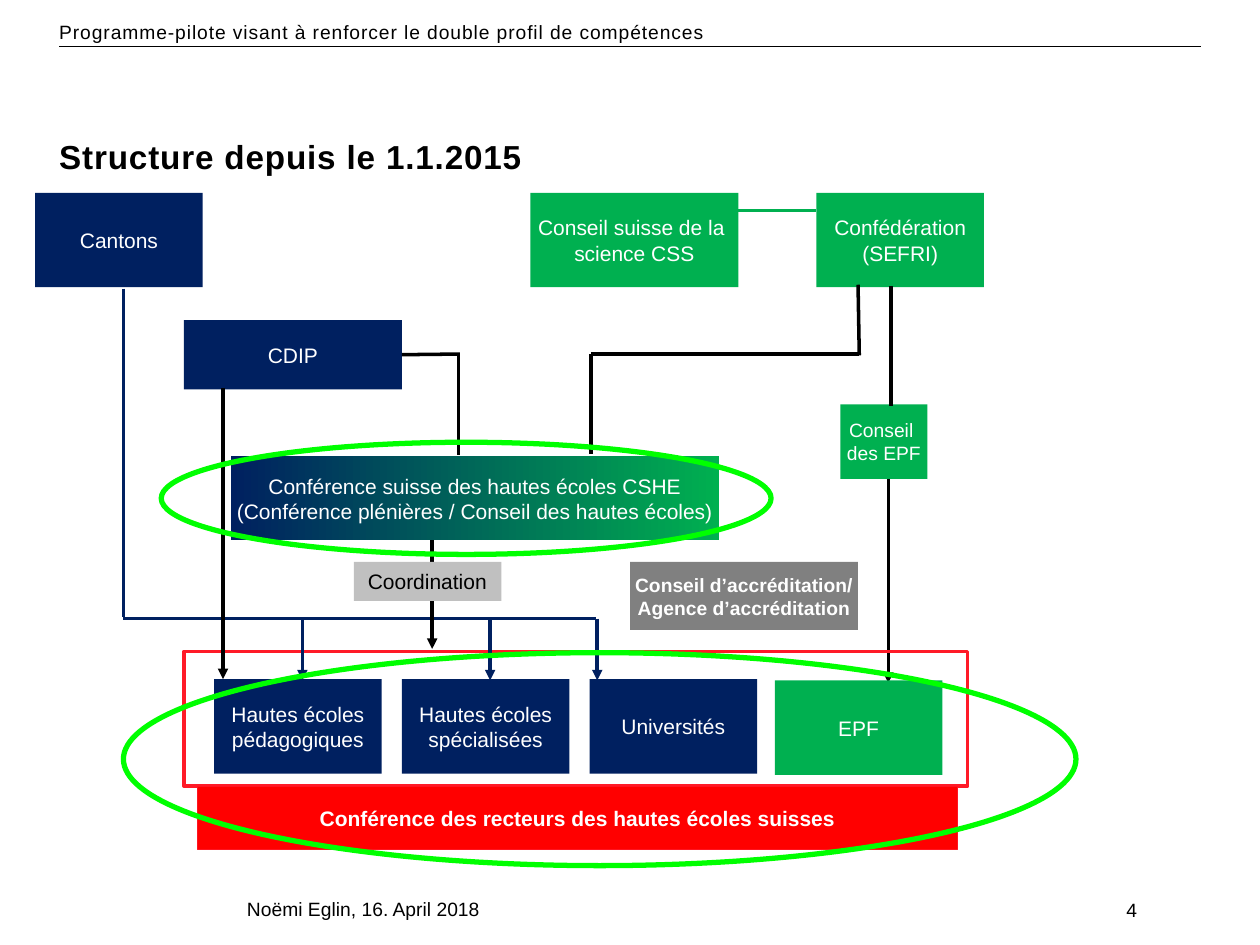
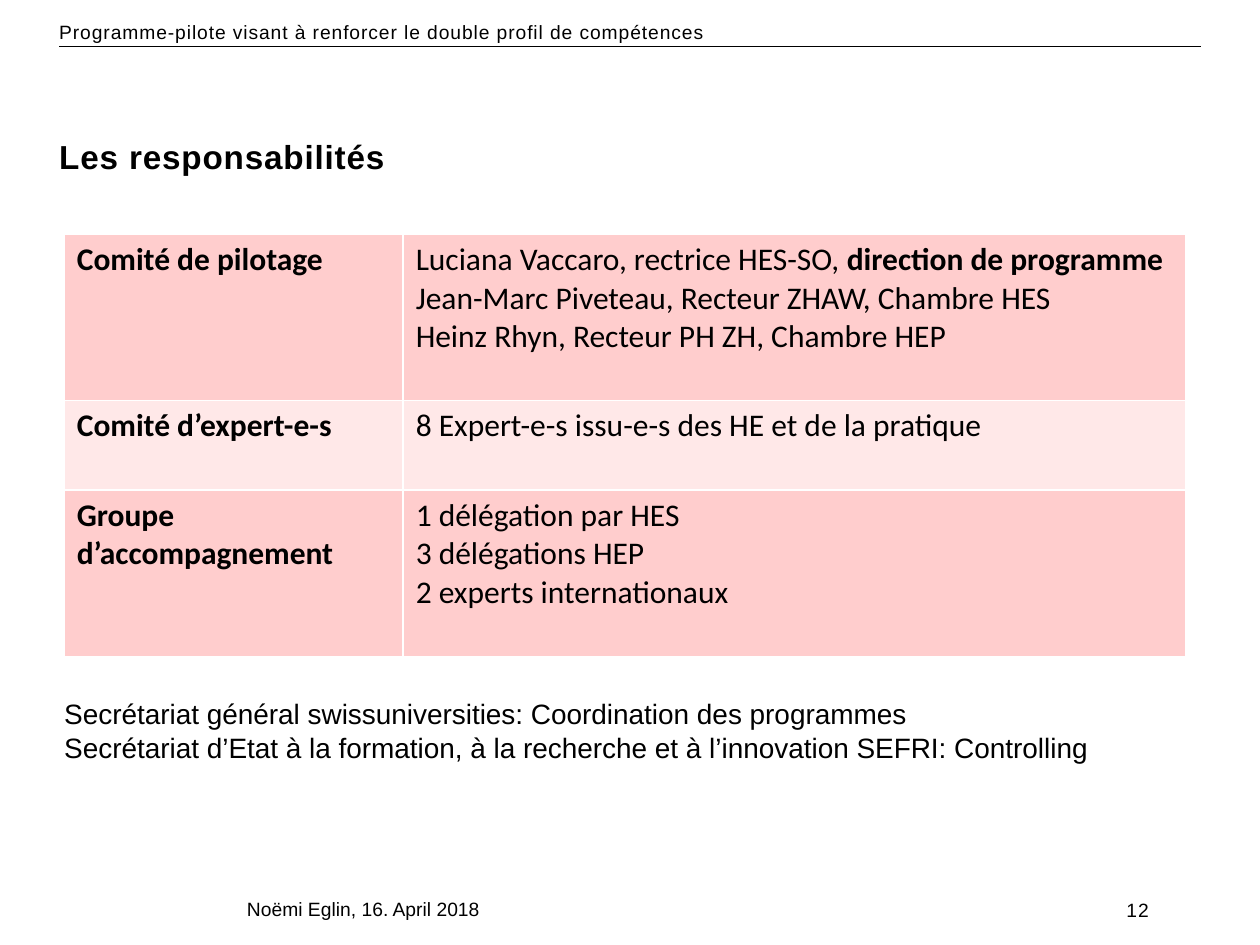
from lxml import etree
from pptx import Presentation
from pptx.dml.color import RGBColor
from pptx.enum.shapes import MSO_CONNECTOR, MSO_SHAPE
from pptx.enum.text import MSO_ANCHOR, PP_ALIGN
from pptx.oxml.ns import qn
from pptx.util import Inches, Pt

STRAIGHT = MSO_CONNECTOR.STRAIGHT
RECTANGLE, ELLIPSE = MSO_SHAPE.RECTANGLE, MSO_SHAPE.OVAL
TOP, MIDDLE = MSO_ANCHOR.TOP, MSO_ANCHOR.MIDDLE
LEFT, CENTER = PP_ALIGN.LEFT, PP_ALIGN.CENTER
RIGHT_SIDE = 3
TITLE_ONLY = 5

BLACK, WHITE = "000000", "FFFFFF"
NAVY, GREEN = "002060", "00B050"
GREY, SILVER = "808080", "C0C0C0"
RED, RED_OUTLINE, RED_EDGE = "FF0000", "FF1A27", "FF1421"
HIGHLIGHT = "00FF00"
ROSE, PALE_ROSE = "FFCDCD", "FFE8E8"

PROGRAMME = "Programme-pilote visant à renforcer le double profil de compétences"
AUTHOR = "Noëmi Eglin, 16. April 2018"


def color(value):
    return RGBColor.from_string(value)


def write_text(frame, lines, size=12, font="Arial", ink=BLACK, bold=False,
               align=LEFT, anchor=TOP, margins=(0.1, 0.05), wrap=True,
               line_height=None, tracking=0):
    """Write one paragraph per line; a line is a string or a list of (text, bold)."""
    frame.word_wrap = wrap
    frame.vertical_anchor = anchor
    frame.margin_left = frame.margin_right = Inches(margins[0])
    frame.margin_top = frame.margin_bottom = Inches(margins[1])
    for index, line in enumerate(lines):
        paragraph = frame.paragraphs[0] if index == 0 else frame.add_paragraph()
        paragraph.alignment = align
        if line_height:
            paragraph.line_spacing = Pt(line_height)
        for text, is_bold in [(line, bold)] if isinstance(line, str) else line:
            run = paragraph.add_run()
            run.text = text
            run.font.name = font
            run.font.size = Pt(size)
            run.font.bold = is_bold
            run.font.color.rgb = color(ink)
            if tracking:
                run._r.get_or_add_rPr().set("spc", str(round(tracking * 100)))


class Deck:
    flush = {"margins": (0, 0)}
    small = {"size": 11, "margins": (0, 0), "line_height": 13.2, "tracking": 0.5}
    heading = {"size": 19, "bold": True, "margins": (0, 0),
               "line_height": 22.8, "tracking": 0.5}

    def __init__(self):
        self.presentation = Presentation()
        self.presentation.slide_width = Inches(10)
        self.presentation.slide_height = Inches(7.5)
        self.slide = None

    def new_slide(self, title, number):
        layout = self.presentation.slide_layouts[TITLE_ONLY]
        self.slide = self.presentation.slides.add_slide(layout)
        # Header band
        self.line((0.47, 0.37), (9.53, 0.37), width=0.6)
        self.text((0.47, 0.16, 9.06, 0.37), [PROGRAMME], **self.small)
        # Title
        shape = self.slide.shapes.title
        shape.left, shape.top, shape.width, shape.height = map(
            Inches, (0.47, 1.08, 9.06, 0.42))
        write_text(shape.text_frame, [title], **self.heading)
        # Footer
        self.text((1.96, 7.12, 5.09, 0.22), [AUTHOR], size=11, **self.flush)
        self.text((8.94, 7.13, 0.59, 0.2), [str(number)], **self.small)

    def text(self, box, lines, **style):
        shape = self.slide.shapes.add_textbox(*map(Inches, box))
        write_text(shape.text_frame, lines, **style)

    def shape(self, box, preset=RECTANGLE, fill=None, outline=None, width=2):
        shape = self.slide.shapes.add_shape(preset, *map(Inches, box))
        shape.shadow.inherit = False
        if isinstance(fill, tuple):
            shape.fill.gradient()
            shape.fill.gradient_angle = 0
            for position, (stop, value) in enumerate(
                    zip(shape.fill.gradient_stops, fill)):
                stop.position = position
                stop.color.rgb = color(value)
        elif fill:
            shape.fill.solid()
            shape.fill.fore_color.rgb = color(fill)
        else:
            shape.fill.background()
        if outline:
            shape.line.color.rgb = color(outline)
            shape.line.width = Pt(width)
        else:
            shape.line.fill.background()
        return shape

    def label_box(self, box, lines, fill, outline=None, **style):
        shape = self.shape(box, fill=fill, outline=outline, width=0.75)
        style = {"ink": WHITE, "align": CENTER, "anchor": MIDDLE,
                 "wrap": False, **style}
        write_text(shape.text_frame, lines, **style)
        return shape

    def line(self, start, end, ink=BLACK, width=2, arrow=False):
        connector = self.slide.shapes.add_connector(
            STRAIGHT, *map(Inches, start + end))
        connector.line.color.rgb = color(ink)
        connector.line.width = Pt(width)
        if arrow:
            etree.SubElement(connector.line._get_or_add_ln(),
                             qn("a:tailEnd"), type="triangle")
        etree.SubElement(connector._element.spPr, qn("a:effectLst"))
        return connector

    def table(self, left, top, widths, heights, rows, fills, **style):
        frame = self.slide.shapes.add_table(
            len(rows), len(widths), Inches(left), Inches(top),
            Inches(sum(widths)), Inches(sum(heights)))
        table = frame.table
        table.first_row = table.horz_banding = False
        for column, width in zip(table.columns, widths):
            column.width = Inches(width)
        for row, height, contents, fill in zip(table.rows, heights, rows, fills):
            row.height = Inches(height)
            for cell, lines in zip(row.cells, contents):
                cell.fill.solid()
                cell.fill.fore_color.rgb = color(fill)
                self.cell_borders(cell, WHITE, 1)
                write_text(cell.text_frame, lines, **style)
                cell.margin_left = cell.margin_right = Inches(0.1)
                cell.margin_top = cell.margin_bottom = Inches(0.05)

    @staticmethod
    def cell_borders(cell, ink, width):
        properties = cell._tc.get_or_add_tcPr()
        for index, side in enumerate(("lnL", "lnR", "lnT", "lnB")):
            border = etree.Element(qn(f"a:{side}"), w=str(Pt(width)))
            fill = etree.SubElement(border, qn("a:solidFill"))
            etree.SubElement(fill, qn("a:srgbClr"), val=ink)
            properties.insert(index, border)


def build_structure(deck):
    deck.new_slide("Structure depuis le 1.1.2015", 4)
    school_width, school_height = 1.33, 0.75

    # Federal council branch
    deck.line((7.05, 3.8), (7.05, 5.42), arrow=True)
    deck.label_box((6.67, 3.21, 0.69, 0.59), ["Conseil ", "des EPF"], GREEN, size=11)

    # Schools
    schools = [
        (1.7, 5.39, ["Hautes écoles", "pédagogiques"], NAVY),
        (3.19, 5.39, ["Hautes écoles", "spécialisées"], NAVY),
        (4.68, 5.39, ["Universités"], NAVY),
        (6.15, 5.4, ["EPF"], GREEN),
    ]
    for left, top, lines, fill in schools:
        deck.label_box((left, top, school_width, school_height), lines, fill)

    # Confederation and its links
    deck.line((5.85, 1.67), (6.48, 1.67), GREEN)
    deck.line((4.69, 2.81), (4.69, 3.6))
    deck.line((4.69, 2.81), (6.82, 2.81))
    deck.label_box((6.48, 1.53, school_width, school_height),
                   ["Confédération", "(SEFRI)"], GREEN)
    deck.line((7.07, 2.27), (7.07, 3.22))
    deck.line((6.81, 2.26), (6.82, 2.82))

    # Accreditation
    deck.label_box((5, 4.46, 1.81, 0.54),
                   ["Conseil d’accréditation/", "Agence d’accréditation"],
                   GREY, size=11, bold=True)

    # Rectors' conference
    deck.shape((1.46, 5.17, 6.22, 1.07), outline=RED_OUTLINE)
    deck.label_box((1.57, 6.24, 6.03, 0.5),
                   ["Conférence des recteurs des hautes écoles suisses"],
                   RED, outline=RED_EDGE, bold=True)

    # Cantons and their arrows to the schools
    deck.line((0.98, 2.29), (0.98, 4.9), NAVY)
    deck.label_box((0.28, 1.53, school_width, school_height), ["Cantons"], NAVY)
    deck.line((4.73, 4.91), (0.98, 4.91), NAVY)
    for x in (2.4, 3.89, 4.74):
        deck.line((x, 4.91), (x, 5.4), NAVY, arrow=True)

    # Cantonal directors
    directors = deck.label_box((1.46, 2.54, 1.73, 0.55), ["CDIP"], NAVY)
    directors_link = deck.line((3.19, 2.81), (3.65, 2.81))
    directors_link.begin_connect(directors, RIGHT_SIDE)
    deck.line((3.64, 2.82), (3.64, 3.61))
    deck.line((1.77, 3.08), (1.77, 5.39), arrow=True)

    # Coordination and the conference of schools
    deck.line((3.43, 4.24), (3.43, 5.15), arrow=True)
    deck.label_box((2.81, 4.46, 1.17, 0.31), ["Coordination"], SILVER, ink=BLACK,
                   align=LEFT, anchor=TOP, wrap=True, margins=(0.11, 0.05))
    deck.label_box((1.83, 3.62, 3.88, 0.67),
                   ["Conférence suisse des hautes écoles CSHE",
                    "(Conférence plénières / Conseil des hautes écoles)"],
                   (NAVY, GREEN))

    # Highlights
    for box in ((1.28, 3.51, 4.84, 0.89), (0.98, 5.18, 7.56, 1.69)):
        deck.shape(box, ELLIPSE, outline=HIGHLIGHT, width=3)

    # Science council
    deck.label_box((4.21, 1.53, 1.65, school_height),
                   ["Conseil suisse de la ", "science CSS"], GREEN)


def build_responsibilities(deck):
    deck.new_slide("Les responsabilités", 12)

    # Committees
    committees = [
        ("Comité de pilotage",
         [[("Luciana Vaccaro, rectrice HES-SO, ", False),
           ("direction de programme", True)],
          "Jean-Marc Piveteau, Recteur ZHAW, Chambre HES",
          "Heinz Rhyn, Recteur PH ZH, Chambre HEP"]),
        ("Comité d’expert-e-s",
         ["8 Expert-e-s issu-e-s des HE et de la pratique"]),
        ("Groupe d’accompagnement",
         ["1 délégation par HES", "3 délégations HEP",
          "2 experts internationaux"]),
    ]
    rows = [([[(name, True)]], members) for name, members in committees]
    deck.table(0.51, 1.86, (2.69, 6.21), (1.32, 0.71, 1.32), rows,
               (ROSE, PALE_ROSE, ROSE), size=18, font="Calibri")

    # Secretariats
    deck.text((0.51, 5.53, 8.9, 0.54),
              ["Secrétariat général swissuniversities: Coordination des programmes",
               "Secrétariat d’Etat à la formation, à la recherche et à "
               "l’innovation SEFRI: Controlling"],
              size=16, **deck.flush)


def main():
    deck = Deck()
    build_structure(deck)
    build_responsibilities(deck)
    deck.presentation.save("out.pptx")


if __name__ == "__main__":
    main()
